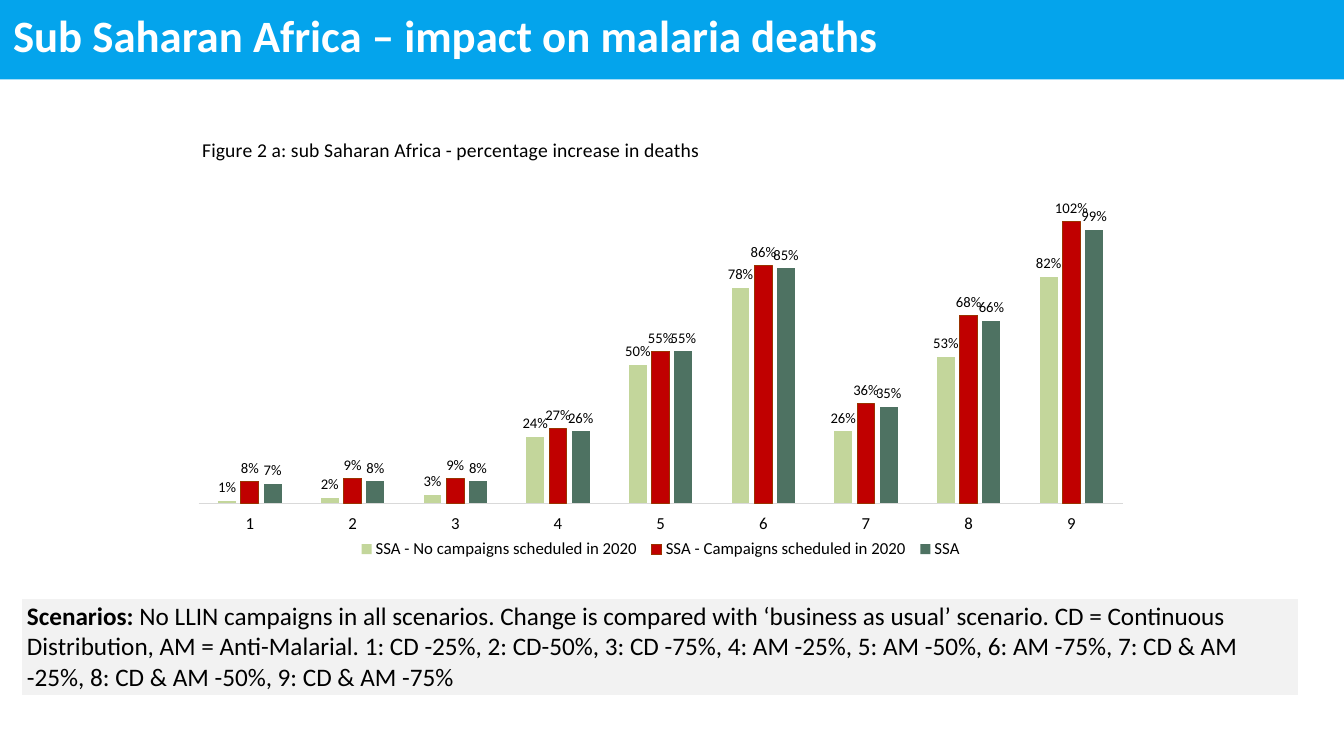
from lxml.etree import SubElement
from pptx import Presentation
from pptx.chart.data import CategoryChartData
from pptx.dml.color import RGBColor
from pptx.enum.chart import (XL_CHART_TYPE, XL_LABEL_POSITION,
                             XL_LEGEND_POSITION, XL_TICK_LABEL_POSITION,
                             XL_TICK_MARK)
from pptx.enum.shapes import MSO_SHAPE
from pptx.enum.text import MSO_ANCHOR
from pptx.oxml.ns import qn
from pptx.util import Cm, Pt

COLORS = {"band": "04A4EC", "white": "FFFFFF", "text": "000000",
          "note": "F2F2F2", "axis": "D9D9D9", "none": "C3D69B",
          "campaign": "C00000", "outline": "993300", "all": "4E7262"}

SERIES = [
    ("SSA - No campaigns scheduled in 2020", "none",
     (0.01, 0.02, 0.03, 0.24, 0.5, 0.78, 0.26, 0.53, 0.82)),
    ("SSA - Campaigns scheduled in 2020", "campaign",
     (0.08, 0.09, 0.09, 0.27, 0.55, 0.86, 0.36, 0.68, 1.02)),
    ("SSA", "all",
     (0.07, 0.08, 0.08, 0.26, 0.55, 0.85, 0.35, 0.66, 0.99)),
]

SCENARIOS = (
    "No LLIN campaigns in all scenarios. Change is compared with ‘business as "
    "usual’ scenario. CD = Continuous Distribution, AM = Anti-Malarial. "
    "1: CD -25%, 2: CD-50%, 3: CD -75%, 4: AM -25%, 5: AM -50%, 6: AM -75%, "
    "7: CD & AM -25%, 8: CD & AM -50%, 9: CD & AM -75%")


def rgb(name):
    return RGBColor.from_string(COLORS[name])


def apply(obj, values):
    for name, value in values.items():
        setattr(obj, name, value)


def style(font, size, color="text", bold=False):
    apply(font, {"name": "Calibri", "size": Pt(size), "bold": bold})
    font.color.rgb = rgb(color)


def set_layout(element, index, **values):
    for old in element.findall(qn("c:layout")):
        element.remove(old)
    layout = SubElement(element, qn("c:layout"))
    element.insert(index, layout)
    manual = SubElement(layout, qn("c:manualLayout"))
    for name, value in values.items():
        SubElement(manual, qn(f"c:{name}")).set("val", str(value))


def add_header(s, left, top, width, height):
    band = s.shapes.add_shape(MSO_SHAPE.RECTANGLE, left, top, width, height)
    band.shadow.inherit = False
    band.fill.solid()
    band.fill.fore_color.rgb = rgb("band")
    band.line.fill.background()
    sp = s.shapes.add_textbox(left + Cm(0.08), top + Cm(0.05),
                              Cm(29.21), height - Cm(0.38))
    tf = sp.text_frame
    apply(tf, {"word_wrap": True, "vertical_anchor": MSO_ANCHOR.MIDDLE})
    r = tf.paragraphs[0].add_run()
    r.text = "Sub Saharan Africa – impact on malaria deaths"
    style(r.font, 32, "white", True)


def add_deaths_chart(s, left, top, width, height):
    data = CategoryChartData(number_format="0%")
    data.categories = [str(n) for n in range(1, 10)]
    for name, _, values in SERIES:
        data.add_series(name, values)
    chart = s.shapes.add_chart(XL_CHART_TYPE.COLUMN_CLUSTERED, left, top,
                               width, height, data).chart
    style(chart.font, 12)

    title = chart.chart_title
    r = title.text_frame.paragraphs[0].add_run()
    r.text = "Figure 2 a: sub Saharan Africa - percentage increase in deaths"
    style(r.font, 14)
    title.include_in_layout = False
    set_layout(title._element, 1, xMode="edge", yMode="edge", x=0.02, y=0.04)

    apply(chart, {"has_legend": True})
    legend = chart.legend
    apply(legend, {"position": XL_LEGEND_POSITION.BOTTOM,
                   "include_in_layout": False})
    style(legend.font, 12)
    set_layout(legend._element, 1, xMode="edge", yMode="edge",
               x=0.18, y=0.87, w=0.64, h=0.07)

    apply(chart.value_axis, {"visible": False, "minimum_scale": 0,
                             "maximum_scale": 1.2,
                             "has_major_gridlines": False})
    axis = chart.category_axis
    apply(axis, {"major_tick_mark": XL_TICK_MARK.NONE,
                 "minor_tick_mark": XL_TICK_MARK.NONE,
                 "tick_label_position": XL_TICK_LABEL_POSITION.LOW})
    axis.format.line.color.rgb = rgb("axis")
    axis.format.line.width = Pt(0.75)
    style(axis.tick_labels.font, 12)

    plot = chart.plots[0]
    apply(plot, {"gap_width": 219, "overlap": -27,
                 "vary_by_categories": False})
    for series, (_, color, _) in zip(plot.series, SERIES):
        series.invert_if_negative = False
        series.format.fill.solid()
        series.format.fill.fore_color.rgb = rgb(color)
        if color == "campaign":
            series.format.line.color.rgb = rgb("outline")
            series.format.line.width = Pt(0.75)
        labels = series.data_labels
        apply(labels, {"show_value": True, "number_format": "0%",
                       "number_format_is_linked": False,
                       "position": XL_LABEL_POSITION.OUTSIDE_END})
        style(labels.font, 10.5)
    plot_area = chart._chartSpace.find(".//" + qn("c:plotArea"))
    set_layout(plot_area, 0, layoutTarget="inner", xMode="edge", yMode="edge",
               x=0.02, y=0.12, w=0.96, h=0.69)


def add_scenarios(s, left, top, width, height):
    table = s.shapes.add_table(1, 1, left, top, width, height).table
    apply(table, {"first_row": False, "horz_banding": False})
    cell = table.cell(0, 0)
    apply(cell, {"margin_left": Cm(0.15), "margin_right": Cm(0.15),
                 "margin_top": Cm(0.08), "margin_bottom": Cm(0.08)})
    cell.fill.solid()
    cell.fill.fore_color.rgb = rgb("note")
    p = cell.text_frame.paragraphs[0]
    for text, bold in (("Scenarios: ", True), (SCENARIOS, False)):
        r = p.add_run()
        r.text = text
        style(r.font, 18, bold=bold)


def main():
    prs = Presentation()
    apply(prs, {"slide_width": Cm(33.87), "slide_height": Cm(19.05)})
    s = prs.slides.add_slide(prs.slide_layouts[6])
    add_header(s, 0, 0, prs.slide_width, Cm(2))
    add_scenarios(s, Cm(0.53), Cm(15.07), Cm(32.2), Cm(2.44))
    add_deaths_chart(s, Cm(4.52), Cm(2.87), Cm(24.26), Cm(12.12))
    prs.save("out.pptx")


if __name__ == "__main__":
    main()
